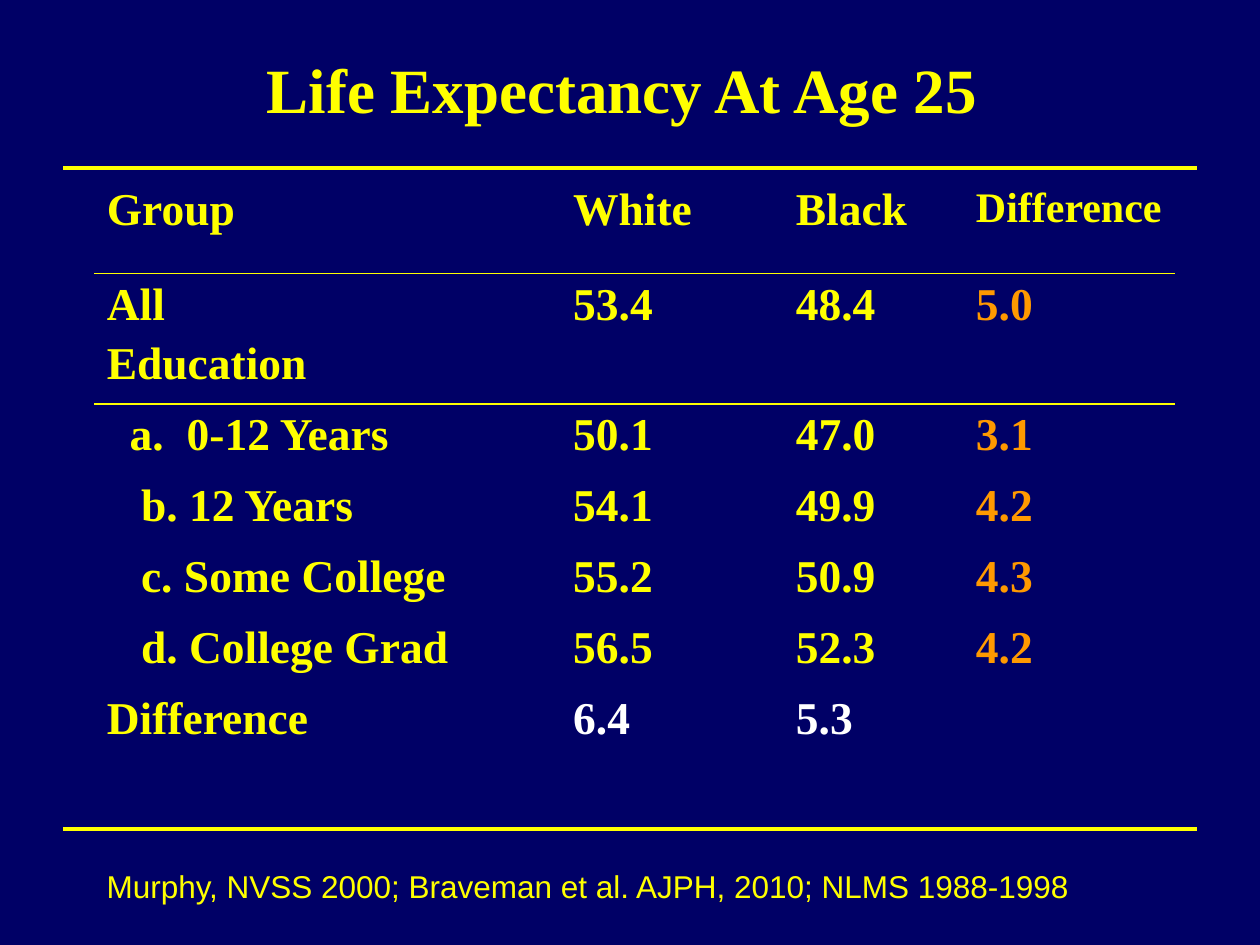
from dataclasses import dataclass

from lxml.etree import SubElement
from pptx import Presentation
from pptx.dml.color import RGBColor
from pptx.enum.shapes import MSO_CONNECTOR
from pptx.enum.text import MSO_ANCHOR, PP_ALIGN
from pptx.oxml import parse_xml
from pptx.oxml.ns import nsdecls, qn
from pptx.util import Cm, Pt


@dataclass(frozen=True)
class Theme:
    navy: str = "000066"
    yellow: str = "FFFF00"
    orange: str = "FF9900"
    white: str = "FFFFFF"
    serif: str = "Times New Roman"
    sans: str = "Arial"
    title: int = 36
    body: int = 26
    small_header: int = 24
    source: int = 18


theme = Theme()


def style(para, size, color=theme.yellow, font=theme.serif, bold=True):
    for span in para.runs:
        span.font.name = font
        span.font.size = Pt(size)
        span.font.bold = bold
        span.font.color.rgb = RGBColor.from_string(color)


def add_text(page, left, top, width, height, text):
    box = page.shapes.add_textbox(Cm(left), Cm(top), Cm(width), Cm(height))
    box.text_frame.word_wrap = True
    box.text_frame.text = text
    return box.text_frame


deck = Presentation()
deck.slide_width, deck.slide_height = Cm(25.4), Cm(19.05)
page = deck.slides.add_slide(deck.slide_layouts[6])
page.background.fill.solid()
page.background.fill.fore_color.rgb = RGBColor.from_string(theme.navy)

# Title
title = add_text(page, 1.9, 0.2, 21.6, 3.18, "Life Expectancy At Age 25 ")
title.vertical_anchor = MSO_ANCHOR.MIDDLE
title.paragraphs[0].alignment = PP_ALIGN.CENTER
style(title.paragraphs[0], theme.title)

# Rules above and below the table
for height in (3.38, 16.71):
    rule = page.shapes.add_connector(
        MSO_CONNECTOR.STRAIGHT, Cm(1.27), Cm(height), Cm(24.13), Cm(height))
    rule.line.color.rgb = RGBColor.from_string(theme.yellow)
    rule.line.width = Pt(2.25)
    SubElement(rule.element.spPr, qn("a:effectLst"))

# Source
source = add_text(page, 1.9, 17.35, 21.4, 1.02,
                  "Murphy, NVSS 2000; Braveman et al. AJPH, 2010; NLMS 1988-1998")
style(source.paragraphs[0], theme.source, font=theme.sans, bold=False)

# Table
rows = [
    ("Group", "White", "Black", "Difference"),
    ("All\nEducation", "53.4", "48.4", "5.0"),
    ("a.\t0-12 Years", "50.1", "47.0", "3.1"),
    ("b. 12 Years", "54.1", "49.9", "4.2"),
    ("c. Some College", "55.2", "50.9", "4.3"),
    ("d. College Grad", "56.5", "52.3", "4.2"),
    ("Difference", "6.4", "5.3", ""),
]
column_widths = (9.4, 4.49, 3.63, 4.27)
row_heights = (1.91, 2.34) + (1.43,) * 5
last_row, last_column = len(rows) - 1, len(column_widths) - 1
# Left margin and first-line indent of the education levels
indents = {2: (1.61, -1.15), 3: (0.69, 0), 4: (0.69, 0), 5: (0.69, 0)}

table = page.shapes.add_table(
    len(rows), len(column_widths), Cm(1.9), Cm(3.6),
    Cm(sum(column_widths)), Cm(sum(row_heights))).table
table.first_row = table.horz_banding = False
# Table style without fills or grid
table._tbl.tblPr.find(qn("a:tableStyleId")).text = "{2D5ABB26-0587-4C30-8999-92F81FD0307C}"
for column, width in zip(table.columns, column_widths):
    column.width = Cm(width)
for row, height in zip(table.rows, row_heights):
    row.height = Cm(height)

for row_number, texts in enumerate(rows):
    for column_number, text in enumerate(texts):
        cell = table.cell(row_number, column_number)
        cell.text_frame.text = text

        size, color = theme.body, theme.yellow
        if column_number == last_column:
            if row_number == 0:
                size = theme.small_header
            else:
                color = theme.orange
        elif row_number == last_row and column_number > 0:
            color = theme.white
        for para_number, para in enumerate(cell.text_frame.paragraphs):
            para.space_before = Pt(5 if para_number else 0)
            style(para, size, color)

        if column_number == 0 and row_number in indents:
            margin, first_line = indents[row_number]
            properties = cell.text_frame.paragraphs[0]._p.get_or_add_pPr()
            properties.set("marL", str(Cm(margin)))
            properties.set("indent", str(Cm(first_line)))

        # Line between the header and the first row
        if row_number < 2:
            side = "lnB" if row_number == 0 else "lnT"
            cell._tc.get_or_add_tcPr().append(parse_xml(
                f'<a:{side} {nsdecls("a")} w="{Pt(1)}"><a:solidFill>'
                f'<a:srgbClr val="{theme.yellow}"/></a:solidFill></a:{side}>'))
        cell.fill.background()

deck.save("out.pptx")
